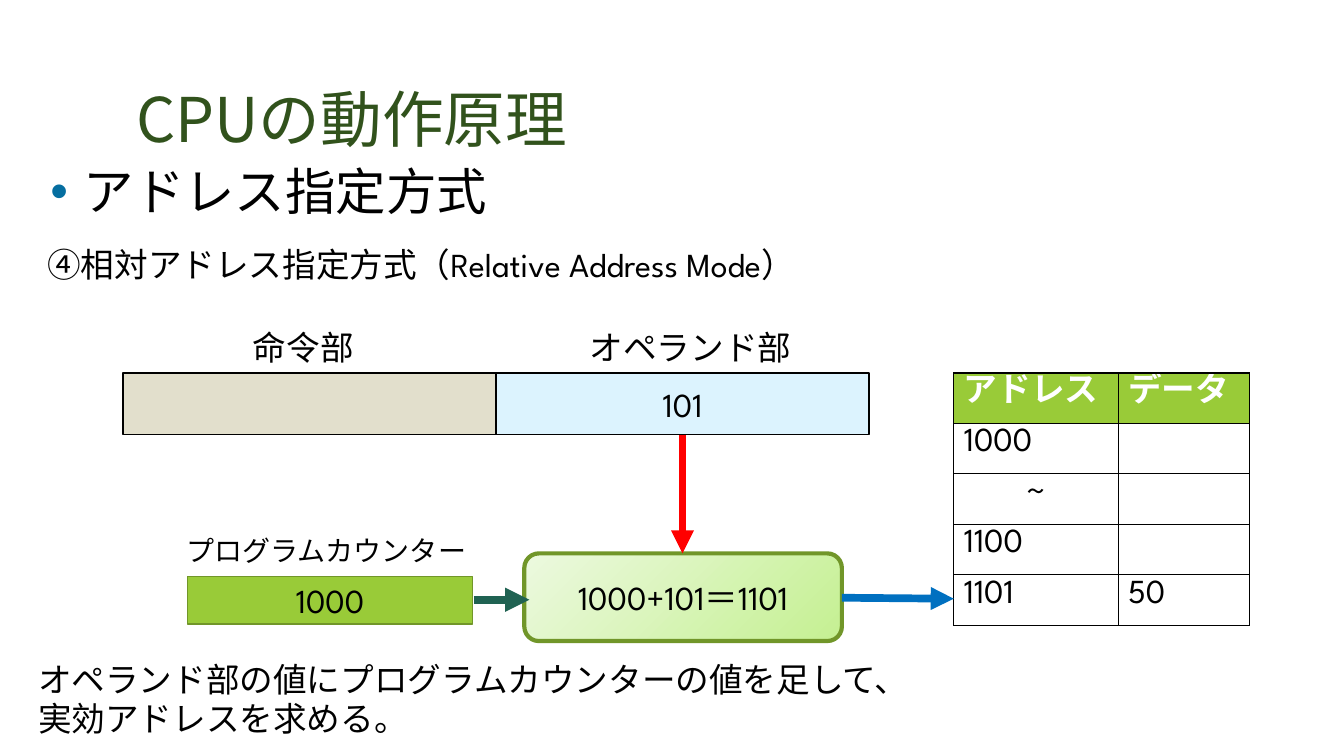
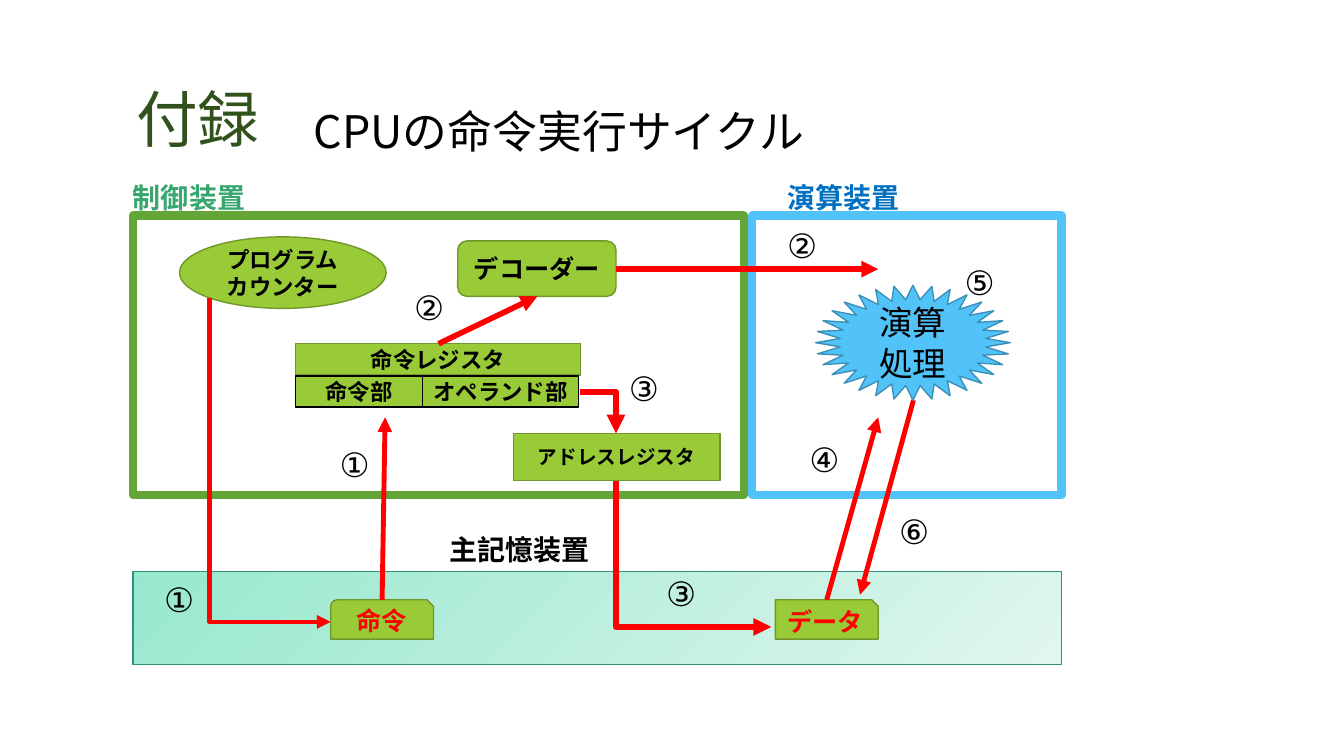
import pptx
import pptx.util
import pptx.dml.color
import pptx.enum.shapes
import pptx.enum.text
import pptx.oxml.ns
from lxml import etree

Inches, Pt = pptx.util.Inches, pptx.util.Pt
RGB = pptx.dml.color.RGBColor
SHAPE = pptx.enum.shapes.MSO_SHAPE
CONNECTOR = pptx.enum.shapes.MSO_CONNECTOR
ALIGN = pptx.enum.text.PP_ALIGN
ANCHOR = pptx.enum.text.MSO_ANCHOR
qn = pptx.oxml.ns.qn

BLACK, WHITE, RED = RGB(0, 0, 0), RGB(255, 255, 255), RGB(255, 0, 0)
TITLE_GREEN = RGB(0x31, 0x52, 0x1C)
GREEN, GREEN_EDGE = RGB(0x99, 0xCB, 0x38), RGB(0x71, 0x96, 0x29)
LIME_LIGHT, LIME = RGB(0xEC, 0xF9, 0xDF), RGB(0xC5, 0xF0, 0x92)
SAND, PALE_BLUE = RGB(0xE2, 0xDF, 0xCC), RGB(0xDC, 0xF3, 0xFE)
TEAL, BLUE = RGB(0x20, 0x62, 0x52), RGB(0x00, 0x70, 0xC0)
CONTROL_EDGE, CONTROL_TEXT = RGB(0x63, 0xA5, 0x37), RGB(0x37, 0xA7, 0x6F)
SKY, SKY_EDGE = RGB(0x51, 0xC3, 0xF9), RGB(0x3C, 0x90, 0xB8)
MINT, MINT_LIGHT = RGB(0x97, 0xE8, 0xCE), RGB(0xE0, 0xF6, 0xEF)
MINT_EDGE = RGB(0x32, 0x8F, 0x79)
BULLET_BLUE = "056EA0"

HEADING_FONT, TEXT_FONT = "Noto Sans CJK JP", "League Spartan"
WIDE_INSETS = (0.13, 0.07)

# Relative addressing: text, box, size
ADDRESS_LABELS = [
    ("④相対アドレス指定方式（Relative Address Mode）", (0.37, 2.37, 12.76, 1.31), 24, 1),
    ("命令部", (2.41, 3.22, 1.97, 0.48), 24, 0.95),
    ("オペランド部", (5.75, 3.22, 2.26, 0.48), 24, 0.95),
    ("プログラムカウンター", (1.75, 5.27, 3.15, 0.42), 20, 0.95),
    ("オペランド部の値にプログラムカウンターの値を足して、実効アドレスを求める。",
     (0.28, 6.52, 8.87, 0.87), 24, 0.95),
]
# kind, box, fill, edge, edge width, text
ADDRESS_BOXES = [
    (SHAPE.RECTANGLE, (1.22, 3.7, 3.7, 0.61), SAND, BLACK, 1, ""),
    (SHAPE.RECTANGLE, (4.92, 3.7, 3.7, 0.61), PALE_BLUE, BLACK, 1, "101"),
    (SHAPE.RECTANGLE, (1.86, 5.72, 2.83, 0.47), GREEN, GREEN_EDGE, 1, "1000"),
    (SHAPE.ROUNDED_RECTANGLE, (5.2, 5.49, 3.15, 0.87), (LIME_LIGHT, LIME), GREEN_EDGE, 3,
     "1000+101＝1101"),
]
ADDRESS_ARROWS = [
    ((4.7, 5.95), (5.25, 5.95), TEAL, 5.75),
    ((6.77, 4.32), (6.77, 5.49), RED, 5.5),
    ((8.35, 5.93), (9.46, 5.94), BLUE, 5.5),
]
MEMORY = [("アドレス", "データ"), ("1000", ""), ("~", ""), ("1100", ""), ("1101", "50")]
MEMORY_AT, MEMORY_COLUMNS, MEMORY_ROW = (9.46, 3.7), (1.63, 1.3), 0.5

# Instruction cycle
UNITS = [
    ((1.32, 2.14, 6.06, 2.77), None, CONTROL_EDGE, 6),
    ((7.46, 2.14, 3.07, 2.77), None, SKY, 6),
    ((1.32, 5.67, 9.21, 0.92), (MINT, MINT_LIGHT), MINT_EDGE, 1),
]
PARTS = [
    (SHAPE.OVAL, (1.78, 2.35, 2.05, 0.71), GREEN_EDGE, "プログラムカウンター", 16, BLACK),
    (SHAPE.ROUNDED_RECTANGLE, (4.54, 2.39, 1.57, 0.55), GREEN_EDGE, "デコーダー", 18, BLACK),
    (SHAPE.RECTANGLE, (2.93, 3.41, 2.83, 0.31), GREEN_EDGE, "命令レジスタ", 16, BLACK),
    (SHAPE.RECTANGLE, (2.93, 3.73, 1.26, 0.31), BLACK, "命令部", 16, BLACK),
    (SHAPE.RECTANGLE, (4.19, 3.73, 1.55, 0.31), BLACK, "オペランド部", 16, BLACK),
    (SHAPE.RECTANGLE, (5.09, 4.3, 2.05, 0.47), GREEN_EDGE, "アドレスレジスタ", 14, BLACK),
    (SHAPE.SNIP_ROUND_RECTANGLE, (3.28, 5.95, 1.02, 0.39), GREEN_EDGE, "命令", 18, RED),
    (SHAPE.SNIP_1_RECTANGLE, (7.69, 5.95, 1.02, 0.39), GREEN_EDGE, "データ", 18, RED),
]
UNIT_NAMES = [
    ("制御装置", (1.22, 1.77, 1.71, 0.42), CONTROL_TEXT),
    ("演算装置", (7.71, 1.77, 1.71, 0.42), BLUE),
]
STEPS = [
    ("①", 1.53, 5.72), ("①", 3.27, 4.38), ("②", 4.01, 2.83), ("②", 7.71, 2.21),
    ("③", 6.14, 3.63), ("③", 6.51, 5.66), ("④", 7.93, 4.33), ("⑤", 9.47, 2.58),
    ("⑥", 8.82, 5.05),
]
CYCLE_ARROWS = [
    ((3.79, 5.95), (3.82, 4.14), 3.5),
    ((4.35, 3.41), (5.33, 2.94), 4),
    ((6.11, 2.67), (8.71, 2.67), 4),
    ((8.2, 5.95), (8.71, 4.14), 3.5),
    ((9.06, 3.97), (8.53, 5.9), 3.5),
]
# start, end, width, whether the first leg runs down
CYCLE_ELBOWS = [
    ((2.08, 2.96), (3.28, 6.17), 3.25, True),
    ((5.75, 3.89), (6.11, 4.3), 4.5, False),
    ((6.11, 4.77), (7.65, 6.22), 4.25, True),
]


def inches(values):
    return [Inches(value) for value in values]


def write(frame, text, size, color=BLACK, bold=False, font=TEXT_FONT, align=None, spacing=None):
    frame.text = text
    paragraph = frame.paragraphs[0]
    paragraph.alignment = align
    if spacing:
        paragraph.line_spacing = spacing
    for run in paragraph.runs:
        run.font.size, run.font.bold, run.font.name = Pt(size), bold, font
        run.font.color.rgb = color
        latin = run.font._element.find(qn("a:latin"))
        east_asian = etree.Element(qn("a:ea"), typeface=font)
        latin.addnext(east_asian)
    return paragraph


def add_label(slide, box, text, size, insets=(0.1, 0.05), anchor=ANCHOR.TOP, **style):
    frame = slide.shapes.add_textbox(*inches(box)).text_frame
    frame.word_wrap = True
    frame.vertical_anchor = anchor
    frame.margin_left = frame.margin_right = Inches(insets[0])
    frame.margin_top = frame.margin_bottom = Inches(insets[1])
    return write(frame, text, size, **style)


def add_heading(slide, box, text, size, spacing=0.95, **style):
    return add_label(slide, box, text, size, WIDE_INSETS, font=HEADING_FONT,
                     spacing=spacing, **style)


def add_titled_slide(deck, title):
    slide = deck.slides.add_slide(deck.slide_layouts[6])
    add_heading(slide, (1.22, 0.08, 11.11, 1.53), title, 44, 0.85,
                anchor=ANCHOR.BOTTOM, color=TITLE_GREEN)
    return slide


def add_box(slide, kind, box, fill, edge, edge_width, text="", size=24, **style):
    """Fill is a colour, a pair of gradient colours, or None."""
    shape = slide.shapes.add_shape(kind, *inches(box))
    shape.shadow.inherit = False
    if fill is None:
        shape.fill.background()
    elif isinstance(fill, RGB):
        shape.fill.solid()
        shape.fill.fore_color.rgb = fill
    else:
        shape.fill.gradient()
        shape.fill.gradient_angle = 315
        for stop, color in zip(shape.fill.gradient_stops, fill):
            stop.color.rgb = color
    shape.line.color.rgb, shape.line.width = edge, Pt(edge_width)
    if text:
        shape.text_frame.vertical_anchor = ANCHOR.MIDDLE
        write(shape.text_frame, text, size, align=ALIGN.CENTER, **style)


def add_arrow(slide, start, end, color, width, kind=CONNECTOR.STRAIGHT):
    arrow = slide.shapes.add_connector(kind, *inches(start + end))
    arrow.line.color.rgb, arrow.line.width = color, Pt(width)
    etree.SubElement(arrow.line._get_or_add_ln(), qn("a:tailEnd"), type="triangle")
    etree.SubElement(arrow._element.spPr, qn("a:effectLst"))
    return arrow


def add_elbow(slide, start, end, color, width, down_first):
    """One-corner arrow; a first leg down needs a mirrored, turned frame."""
    if down_first:
        (x1, y1), (x2, y2) = start, end
        middle_x, middle_y = (x1 + x2) / 2, (y1 + y2) / 2
        half_w, half_h = (y2 - y1) / 2, (x2 - x1) / 2
        start = (middle_x + half_w, middle_y - half_h)
        end = (middle_x - half_w, middle_y + half_h)
    arrow = add_arrow(slide, start, end, color, width, CONNECTOR.ELBOW)
    properties = arrow._element.spPr
    properties.find(qn("a:prstGeom")).set("prst", "bentConnector2")
    if down_first:
        properties.find(qn("a:xfrm")).set("rot", str(270 * 60000))


def add_bullet(paragraph):
    properties = paragraph._p.get_or_add_pPr()
    properties.set("marL", str(Inches(0.33)))
    properties.set("indent", str(-Inches(0.33)))
    color = etree.SubElement(properties, qn("a:buClr"))
    etree.SubElement(color, qn("a:srgbClr"), val=BULLET_BLUE)
    etree.SubElement(properties, qn("a:buFont"), typeface="Arial")
    etree.SubElement(properties, qn("a:buChar"), char="•")


def add_borders(cell):
    properties = cell._tc.get_or_add_tcPr()
    for index, side in enumerate(("lnL", "lnR", "lnT", "lnB")):
        line = etree.Element(qn("a:" + side), w=str(Pt(1)))
        fill = etree.SubElement(line, qn("a:solidFill"))
        etree.SubElement(fill, qn("a:srgbClr"), val=str(BLACK))
        properties.insert(index, line)


def add_memory_table(slide):
    size = (sum(MEMORY_COLUMNS), MEMORY_ROW * len(MEMORY))
    table = slide.shapes.add_table(len(MEMORY), len(MEMORY_COLUMNS),
                                   *inches(MEMORY_AT + size)).table
    for column, width in zip(table.columns, MEMORY_COLUMNS):
        column.width = Inches(width)
    for r, row in enumerate(MEMORY):
        header = r == 0
        for c, text in enumerate(row):
            cell = table.cell(r, c)
            cell.fill.solid()
            cell.fill.fore_color.rgb = GREEN if header else WHITE
            write(cell.text_frame, text, 24, WHITE if header else BLACK, header,
                  align=ALIGN.CENTER if text == "~" else None)
            add_borders(cell)


def build_addressing(deck):
    slide = add_titled_slide(deck, "CPUの動作原理")
    add_bullet(add_heading(slide, (0.37, 1.56, 12.6, 0.8), "アドレス指定方式", 36))
    for text, box, size, spacing in ADDRESS_LABELS:
        add_label(slide, box, text, size, spacing=spacing)
    add_memory_table(slide)
    for box in ADDRESS_BOXES:
        add_box(slide, *box)
    for arrow in ADDRESS_ARROWS:
        add_arrow(slide, *arrow)


def build_cycle(deck):
    slide = add_titled_slide(deck, "付録")
    add_heading(slide, (2.98, 1, 8.41, 0.55), "CPUの命令実行サイクル", 32)
    for unit in UNITS:
        add_box(slide, SHAPE.RECTANGLE, *unit)
    for kind, box, edge, text, size, color in PARTS:
        add_box(slide, kind, box, GREEN, edge, 1, text, size, color=color, bold=True)
    add_heading(slide, (4.33, 5.24, 2.05, 0.55), "主記憶装置", 20, bold=True)
    for text, box, color in UNIT_NAMES:
        add_label(slide, box, text, 20, color=color, bold=True, spacing=0.95)
    for start, end, width in CYCLE_ARROWS:
        add_arrow(slide, start, end, RED, width)
    for start, end, width, down_first in CYCLE_ELBOWS:
        add_elbow(slide, start, end, RED, width, down_first)
    add_box(slide, SHAPE.STAR_32_POINT, (8.09, 2.83, 1.93, 1.14), SKY, SKY_EDGE, 1, "演算処理")
    for number, left, top in STEPS:
        add_label(slide, (left, top, 0.63, 0.48), number, 24, spacing=0.95)


def main():
    deck = pptx.Presentation()
    deck.slide_width, deck.slide_height = Inches(13.33), Inches(7.5)
    build_addressing(deck)
    build_cycle(deck)
    deck.save("out.pptx")


if __name__ == "__main__":
    main()
